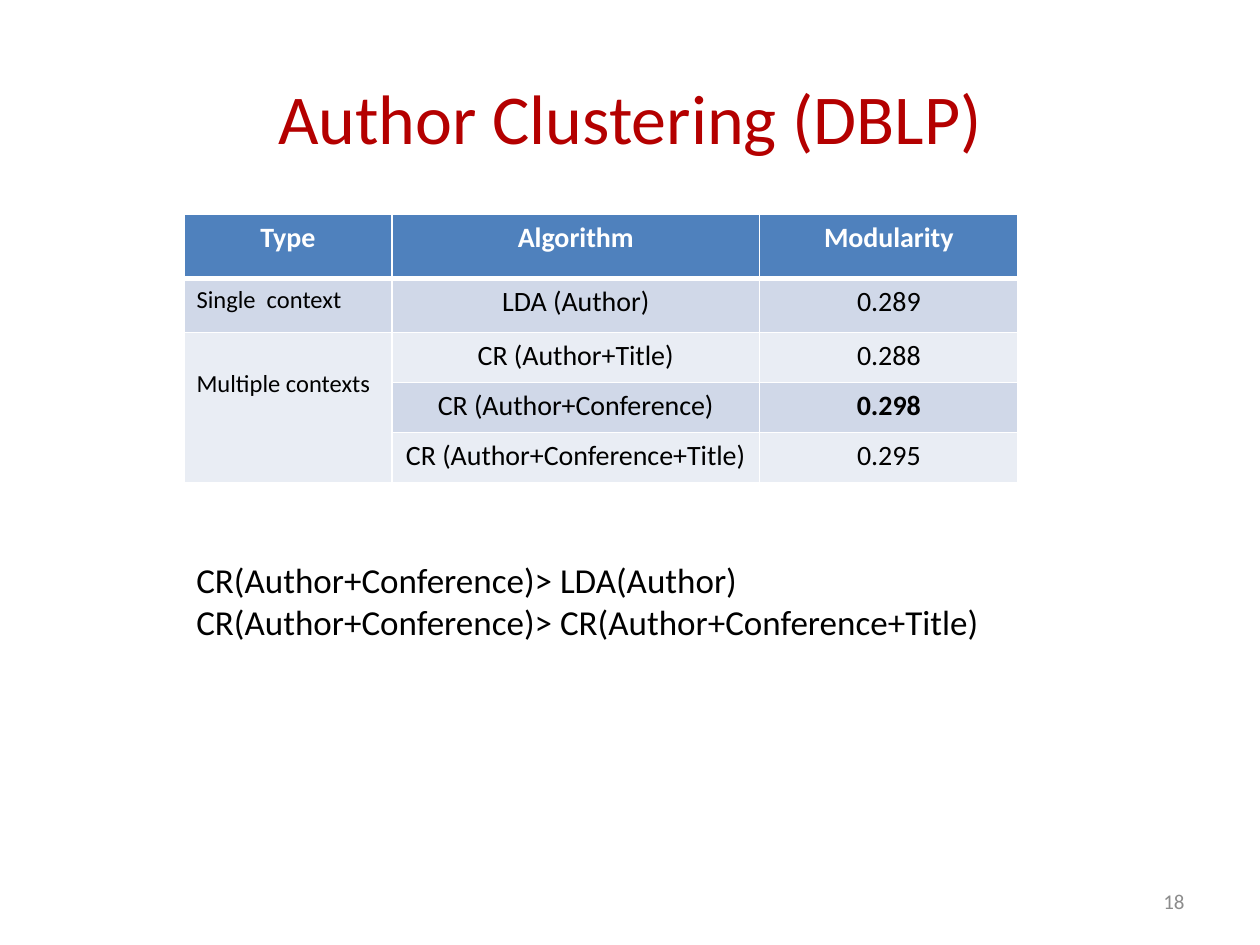
"""Build the author clustering results slide."""
from lxml.etree import SubElement as Sub
from pptx import Presentation
from pptx.dml.color import RGBColor
from pptx.enum.text import MSO_ANCHOR as Anchor, PP_ALIGN as Align
from pptx.oxml.ns import qn
from pptx.util import Inches, Pt

RED = RGBColor(0xB4, 0x00, 0x00)
BLACK = RGBColor(0x00, 0x00, 0x00)
GREY = RGBColor(0x8C, 0x8C, 0x8C)
WHITE = RGBColor(0xFF, 0xFF, 0xFF)
BLUE = RGBColor(0x4F, 0x81, 0xBD)
BANDS = RGBColor(0xD0, 0xD8, 0xE8), RGBColor(0xE9, 0xED, 0xF4)

deck = Presentation()
deck.slide_width, deck.slide_height = Inches(10), Inches(7.5)
page = deck.slides.add_slide(deck.slide_layouts[6])


def share(left, top, width, height):
    wide, high = deck.slide_width, deck.slide_height
    return [int(part * side) for part, side in zip((left, top, width, height), (wide, high) * 2)]


def write(frame, lines, align, size, color, bold=False):
    frame.text = "\n".join(lines)
    for para in frame.paragraphs:
        para.alignment = align
        span = para.runs[0]
        for name, value in {"name": "Calibri", "size": Pt(size), "bold": bold}.items():
            setattr(span.font, name, value)
        span.font.color.rgb = color


RESULTS = ["CR(Author+Conference)> LDA(Author)",
           "CR(Author+Conference)> CR(Author+Conference+Title)"]
TEXTS = [
    ((0.05, 0.04, 0.9, 0.167), ["Author Clustering (DBLP)"], Align.CENTER, 40, RED, Anchor.MIDDLE),
    ((0.146, 0.584, 0.787, 0.148), RESULTS, Align.LEFT, 20, BLACK, Anchor.TOP),
    ((0.717, 0.927, 0.233, 0.053), ["18"], Align.RIGHT, 12, GREY, Anchor.MIDDLE),
]
for place, lines, align, size, color, anchor in TEXTS:
    frame = page.shapes.add_textbox(*share(*place)).text_frame
    for name, value in {"word_wrap": True, "vertical_anchor": anchor}.items():
        setattr(frame, name, value)
    write(frame, lines, align, size, color)

ROWS = [
    ("Type", "Algorithm", "Modularity"),
    ("Single  context", "LDA (Author)", "0.289"),
    ("Multiple contexts", "CR (Author+Title)", "0.288"),
    ("", "CR (Author+Conference)", "0.298"),
    ("", "CR (Author+Conference+Title)", "0.295"),
]
BEST = "0.298"
COLUMN_SHARES = 0.165, 0.292, 0.205
ROW_SHARES = 0.068, 0.057, 0.053, 0.053, 0.053

place = share(0.146, 0.227, sum(COLUMN_SHARES), sum(ROW_SHARES))
table = page.shapes.add_table(len(ROWS), len(COLUMN_SHARES), *place).table
for column, part in zip(table.columns, COLUMN_SHARES):
    column.width = int(part * deck.slide_width)
for row, part in zip(table.rows, ROW_SHARES):
    row.height = int(part * deck.slide_height)

for r, words in enumerate(ROWS):
    header = r == 0
    for c, word in enumerate(words):
        cell = table.cell(r, c)
        label = c == 0 and not header
        for side in "LRTB":
            heavy = (header and side == "B") or (r == 1 and side == "T")
            line = Sub(cell._tc.get_or_add_tcPr(), qn(f"a:ln{side}"), w=str(Pt(3 if heavy else 1)))
            Sub(Sub(line, qn("a:solidFill")), qn("a:srgbClr"), val=str(WHITE))
        cell.fill.solid()
        cell.fill.fore_color.rgb = BLUE if header else BANDS[(r - 1) % 2]
        if word:
            write(cell.text_frame, [word], Align.LEFT if label else Align.CENTER,
                  14 if label else 16, WHITE if header else BLACK, header or word == BEST)

contexts = table.cell(2, 0)
contexts.merge(table.cell(4, 0))
contexts.margin_top = Inches(0.29)

deck.save("out.pptx")
